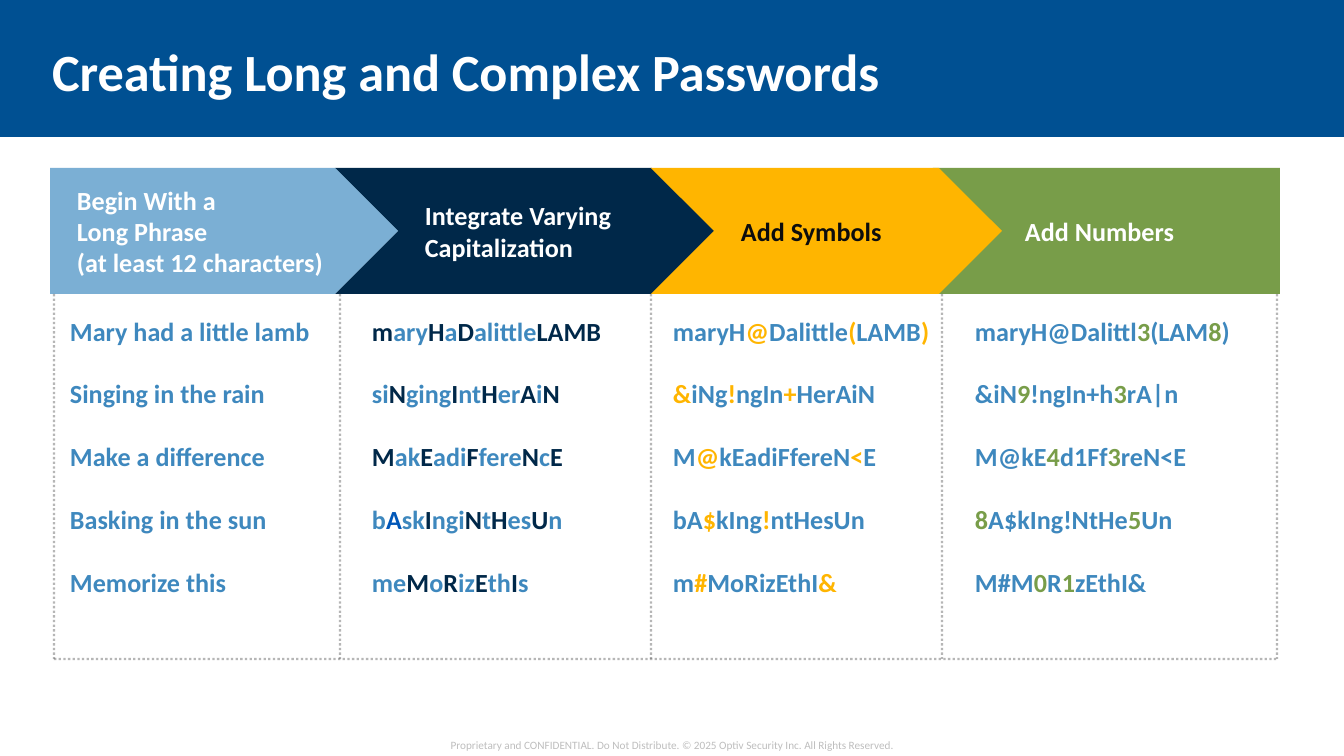
from pptx import Presentation
from pptx.dml.color import RGBColor
from pptx.enum.dml import MSO_LINE
from pptx.enum.shapes import MSO_CONNECTOR, MSO_SHAPE
from pptx.enum.text import MSO_ANCHOR as Anchor, PP_ALIGN as Align
from pptx.oxml.ns import qn
from pptx.util import Pt
from lxml import etree

EMU_PER_PX = 914400 / 134.4
FONT = "Calibri"

WHITE = RGBColor(0xFF, 0xFF, 0xFF)
BLACK = RGBColor(0x00, 0x00, 0x00)
INK = RGBColor(0x0D, 0x0D, 0x0D)
GRAY = RGBColor(0x59, 0x59, 0x59)
BANNER_BLUE = RGBColor(0x00, 0x50, 0x92)
NAVY = RGBColor(0x00, 0x28, 0x49)
SKY = RGBColor(0x7B, 0xAF, 0xD4)
YELLOW = RGBColor(0xFF, 0xB5, 0x00)
GREEN = RGBColor(0x78, 0x9D, 0x49)
TEXT_BLUE = RGBColor(0x3E, 0x88, 0xBE)
BRIGHT_BLUE = RGBColor(0x00, 0x57, 0xB8)

HEADER_TOP, HEADER_HEIGHT = 168, 126
HEADER_BOTTOM = HEADER_TOP + HEADER_HEIGHT
TABLE_LEFT, TABLE_RIGHT, TABLE_BOTTOM = 54, 1277, 659
ROW_GAP = Pt(16.8)

# Asterisks enclose accented letters; a caret picks the bright blue accent
COLUMNS = [
    (70, 294, TEXT_BLUE, [
        "Mary had a little lamb", "Singing in the rain", "Make a difference",
        "Basking in the sun", "Memorize this"]),
    (372, 286, NAVY, [
        "*m*ary*H*a*D*alittle*LAMB*", "si*N*ging*I*nt*H*er*A*i*N*",
        "*M*ak*E*adi*F*fere*N*c*E*", "b*^A*sk*I*ngi*N*t*H*es*U*n",
        "me*M*o*R*iz*E*th*I*s"]),
    (673, 294, YELLOW, [
        "maryH*@*Dalittle*(*LAMB*)*", "*&*iNg*!*ngIn*+*HerAiN",
        "M*@*kEadiFfereN*<*E", "bA*$*kIng*!*ntHesUn", "m*#*MoRizEthI*&*"]),
    (975, 294, GREEN, [
        "maryH@Dalittl*3*(LAM*8*)", "&iN*9*!ngIn+h*3*rA|n",
        "M@kE*4*d1Ff*3*reN<E", "*8*A$kIng!NtHe*5*Un", "M#M*0*R*1*zEthI&"]),
]


def px(value):
    return round(value * EMU_PER_PX)


def set_alpha(element, percent):
    color = next(element.iter(qn("a:srgbClr")))
    etree.SubElement(color, qn("a:alpha")).set("val", str(percent * 1000))


def format_run(run, size, color, bold=True):
    run.font.name = FONT
    run.font.size = Pt(size)
    run.font.bold = bold
    run.font.color.rgb = color


def set_insets(text_frame, left=0, top=0, right=0, bottom=0):
    text_frame.margin_left, text_frame.margin_top = px(left), px(top)
    text_frame.margin_right, text_frame.margin_bottom = px(right), px(bottom)


def fill_plain(shape, color):
    shape.shadow.inherit = False
    shape.fill.solid()
    shape.fill.fore_color.rgb = color
    shape.line.fill.background()


def write_text(text_frame, text, size, color, bold=True, align=Align.LEFT):
    text_frame.text = text
    for paragraph in text_frame.paragraphs:
        paragraph.alignment = align
        for run in paragraph.runs:
            format_run(run, size, color, bold)


def add_text_box(slide, left, top, width, height, wrap=True):
    box = slide.shapes.add_textbox(px(left), px(top), px(width), px(height))
    box.text_frame.word_wrap = wrap
    set_insets(box.text_frame)
    return box.text_frame


def style_header(shape, text, fill, color=WHITE, inset=27):
    fill_plain(shape, fill)
    text_frame = shape.text_frame
    text_frame.word_wrap = True
    text_frame.vertical_anchor = Anchor.MIDDLE
    set_insets(text_frame, inset, 7, 13, 7)
    write_text(text_frame, text, 14, color)


def add_header(slide, kind, left, width, text, fill, color=WHITE):
    shape = slide.shapes.add_shape(
        kind, px(left), px(HEADER_TOP), px(width), px(HEADER_HEIGHT))
    style_header(shape, text, fill, color)


def add_notched_header(slide, left, right, notch, text, fill):
    builder = slide.shapes.build_freeform(px(left), px(HEADER_TOP))
    corners = [(right, HEADER_TOP), (right, HEADER_BOTTOM), (left, HEADER_BOTTOM),
               (notch, HEADER_TOP + HEADER_HEIGHT // 2)]
    builder.add_line_segments([(px(x), px(y)) for x, y in corners], close=True)
    style_header(builder.convert_to_shape(), text, fill, inset=92)


def add_dotted_line(slide, x1, y1, x2, y2):
    line = slide.shapes.add_connector(
        MSO_CONNECTOR.STRAIGHT, px(x1), px(y1), px(x2), px(y2))
    line.line.color.rgb = GRAY
    line.line.width = Pt(1.25)
    line.line.dash_style = MSO_LINE.ROUND_DOT
    properties = line._element.spPr
    set_alpha(properties, 43)
    etree.SubElement(properties, qn("a:effectLst"))


def add_column(slide, left, width, accent, rows):
    text_frame = add_text_box(slide, left, 308, width, 330)
    set_insets(text_frame, top=7, bottom=7)
    for index, row in enumerate(rows):
        if index == 0:
            paragraph = text_frame.paragraphs[0]
        else:
            paragraph = text_frame.add_paragraph()
            paragraph.space_before = ROW_GAP
        for part, text in enumerate(row.split("*")):
            if not text:
                continue
            color = accent if part % 2 else TEXT_BLUE
            if text.startswith("^"):
                color = BRIGHT_BLUE
            run = paragraph.add_run()
            run.text = text.lstrip("^")
            format_run(run, 14, color)


def main():
    presentation = Presentation()
    presentation.slide_width, presentation.slide_height = px(1344), px(756)
    slide = presentation.slides.add_slide(presentation.slide_layouts[6])

    # Footer
    footer = add_text_box(slide, 450, 738, 444, 14, wrap=False)
    footer.vertical_anchor = Anchor.MIDDLE
    write_text(footer, "Proprietary and CONFIDENTIAL. Do Not Distribute. "
               "© 2025 Optiv Security Inc. All Rights Reserved.",
               6, BLACK, bold=False, align=Align.CENTER)
    set_alpha(footer.paragraphs[0].runs[0].font._element, 25)

    # Title banner
    banner = slide.shapes.add_shape(MSO_SHAPE.RECTANGLE, 0, 0, px(1344), px(137))
    fill_plain(banner, BANNER_BLUE)
    title = add_text_box(slide, 52, 39, 1238, 63)
    write_text(title, "Creating Long and Complex Passwords", 28, WHITE)

    # Step headers, overlapping from back to front
    add_header(slide, MSO_SHAPE.CHEVRON, 335, 380,
               "Integrate Varying Capitalization", NAVY)
    add_header(slide, MSO_SHAPE.PENTAGON, 50, 348,
               "Begin With a\vLong Phrase\v(at least 12 characters)", SKY)
    add_notched_header(slide, 933, 1280, 961, "Add Numbers", GREEN)
    add_header(slide, MSO_SHAPE.CHEVRON, 651, 351, "Add Symbols", YELLOW, INK)

    # Dotted frame and column dividers
    for x in (TABLE_LEFT, 340, 651, 942, TABLE_RIGHT):
        add_dotted_line(slide, x, HEADER_BOTTOM, x, TABLE_BOTTOM)
    add_dotted_line(slide, TABLE_LEFT, TABLE_BOTTOM, TABLE_RIGHT, TABLE_BOTTOM)

    # Password examples
    for left, width, accent, rows in COLUMNS:
        add_column(slide, left, width, accent, rows)

    presentation.save("out.pptx")


if __name__ == "__main__":
    main()
